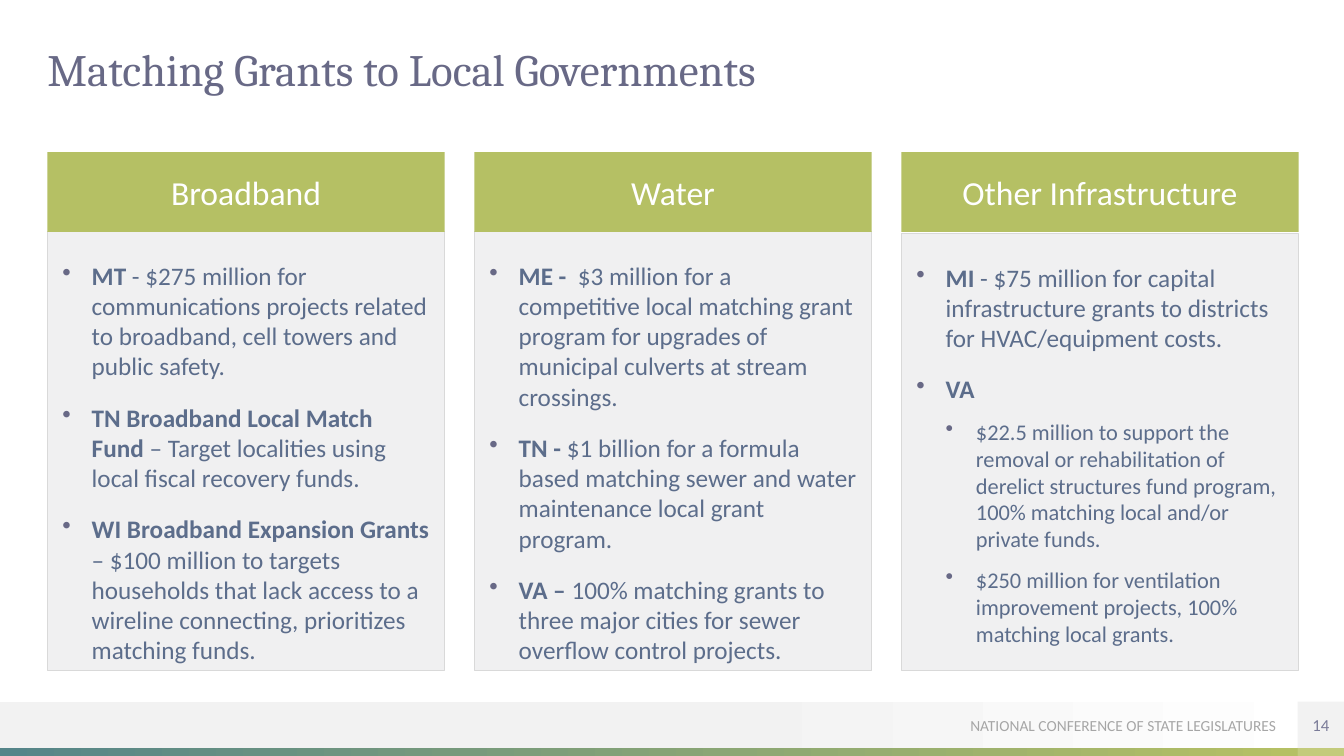
from lxml import etree
from pptx import Presentation
from pptx.dml.color import RGBColor
from pptx.enum.shapes import MSO_SHAPE as Shape
from pptx.enum.text import MSO_ANCHOR as Anchor, PP_ALIGN as Align
from pptx.oxml.ns import qn
from pptx.util import Inches, Pt

WHITE = RGBColor(0xFF, 0xFF, 0xFF)
PALE = RGBColor(0xF2, 0xF2, 0xF2)
BORDER = RGBColor(0xD9, 0xD9, 0xD9)
GREY = RGBColor(0xA6, 0xA6, 0xA6)
PLUM = RGBColor(0x68, 0x69, 0x86)
LILAC = RGBColor(0x7A, 0x7B, 0x98)
INK = RGBColor(0x40, 0x41, 0x53)
SLATE = RGBColor(0x5C, 0x6D, 0x8B)
GREEN = RGBColor(0xB5, 0xC0, 0x64)
LIGHT_GREEN = RGBColor(0xC3, 0xCB, 0x7C)
TEAL = RGBColor(0x55, 0x85, 0x89)

WIDTH, HEIGHT = 13.33, 7.5
MARGIN = 0.47
COLUMN, PITCH = 3.94, 4.235
HEADER_TOP, HEADER_HEIGHT = 1.51, 0.79
PANEL_BOTTOM = 6.65
CORNER = 0.46
FOOTER_TOP, STRIP_TOP = 6.96, 7.42

COLUMNS = [
    ("Broadband", 2.3, [
        (0, "MT ", "- $275 million for communications projects related to broadband, cell towers and public safety."),
        (0, "TN Broadband Local Match Fund ", "– Target localities using local fiscal recovery funds."),
        (0, "WI Broadband Expansion Grants ",
         "– $100 million to targets households that lack access to a wireline connecting, prioritizes matching funds."),
    ]),
    ("Water", 2.3, [
        (0, "ME - ", " $3 million for a competitive local matching grant program for upgrades of "
         "municipal culverts at stream crossings."),
        (0, "TN -", " $1 billion for a formula based matching sewer and water maintenance local grant program."),
        (0, "VA – ", "100% matching grants to three major cities for sewer overflow control projects."),
    ]),
    ("Other Infrastructure", 2.32, [
        (0, "MI ", "- $75 million for capital infrastructure grants to districts for HVAC/equipment costs."),
        (0, "VA", ""),
        (1, "", "$22.5 million to support the removal or rehabilitation of derelict structures fund program, "
         "100% matching local and/or private funds."),
        (1, "", "$250 million for ventilation improvement projects, 100% matching local grants."),
    ]),
]
LEVELS = [(0.29, -0.29, 18, 10), (0.59, -0.3, 16, 5)]


def add_box(left, top, width, height, color=None, insets=(0, 0, 0, 0), anchor=Anchor.MIDDLE):
    box = page.shapes.add_shape(Shape.RECTANGLE, Inches(left), Inches(top), Inches(width), Inches(height))
    box.shadow.inherit = False
    box.line.fill.background()
    if color is None:
        box.fill.background()
    else:
        box.fill.solid()
        box.fill.fore_color.rgb = color
    frame = box.text_frame
    frame.word_wrap = True
    frame.vertical_anchor = anchor
    frame.margin_left, frame.margin_top, frame.margin_right, frame.margin_bottom = map(Inches, insets)
    return box


def style(para, size, color, align, face="Calibri"):
    para.alignment = align
    para.font.size = Pt(size)
    para.font.name = face
    para.font.color.rgb = color


deck = Presentation()
deck.slide_width, deck.slide_height = Inches(WIDTH), Inches(HEIGHT)
page = deck.slides.add_slide(deck.slide_layouts[5])

for top, height, width, stops in [
    (FOOTER_TOP, CORNER, WIDTH, [(0.53, PALE), (1, WHITE)]),
    (STRIP_TOP, HEIGHT - STRIP_TOP, WIDTH - CORNER, [(0, TEAL), (1, GREEN)]),
]:
    band = add_box(0, top, width, height)
    band.fill.gradient()
    band.fill.gradient_angle = 0
    for stop, (position, color) in zip(band.fill.gradient_stops, stops):
        stop.position = position
        stop.color.rgb = color

add_box(WIDTH - CORNER, STRIP_TOP, CORNER, HEIGHT - STRIP_TOP, LIGHT_GREEN)

footer = add_box(8.55, FOOTER_TOP, 4.11, 0.47)
footer.text_frame.text = "NATIONAL CONFERENCE OF STATE LEGISLATURES"
style(footer.text_frame.paragraphs[0], 11, GREY, Align.RIGHT)

number = add_box(WIDTH - CORNER, FOOTER_TOP, CORNER, CORNER, PALE)
number.text_frame.text = "14"
style(number.text_frame.paragraphs[0], 12, LILAC, Align.CENTER)

title = page.shapes.title
title.left, title.top, title.width, title.height = map(Inches, (MARGIN, MARGIN, 12.4, 0.47))
frame = title.text_frame
frame.text = "Matching Grants to Local Governments"
frame.margin_left = frame.margin_top = frame.margin_right = frame.margin_bottom = 0
frame.vertical_anchor = Anchor.TOP
frame.paragraphs[0].line_spacing = 0.9
style(frame.paragraphs[0], 32, PLUM, Align.LEFT, "Cambria")

for index, (heading, panel_top, items) in enumerate(COLUMNS):
    left = MARGIN + index * PITCH
    panel = add_box(left, panel_top, COLUMN, PANEL_BOTTOM - panel_top, INK, (0.15, 0.28, 0.15, 0), Anchor.TOP)
    panel.line.color.rgb = BORDER
    panel.line.width = Pt(0.75)
    tint = panel.fill.fore_color
    fill_color = panel.element.spPr.find(qn("a:solidFill")).find(qn("a:srgbClr"))
    etree.SubElement(fill_color, qn("a:alpha"), val="8000")

    for row, (level, lead, detail) in enumerate(items):
        para = panel.text_frame.paragraphs[0] if row == 0 else panel.text_frame.add_paragraph()
        indent, hanging, size, before = LEVELS[level]
        para.level = level
        properties = para._p.get_or_add_pPr()
        properties.set("marL", str(Inches(indent)))
        properties.set("indent", str(Inches(hanging)))
        bullet_color = etree.SubElement(properties, qn("a:buClr"))
        etree.SubElement(bullet_color, qn("a:srgbClr"), val=str(PLUM))
        etree.SubElement(properties, qn("a:buChar"), char="•")
        para.space_before = Pt(before if row else 0)
        para.space_after = Pt(5)
        style(para, size, SLATE, Align.LEFT)
        for text, bold in [(lead, True), (detail, False)]:
            if text:
                span = para.add_run()
                span.text = text
                span.font.bold = bold

    header = add_box(left, HEADER_TOP, COLUMN, HEADER_HEIGHT, GREEN, (0.12, 0.04, 0.12, 0.04))
    header.text_frame.text = heading
    style(header.text_frame.paragraphs[0], 24, WHITE, Align.CENTER)

deck.save("out.pptx")
